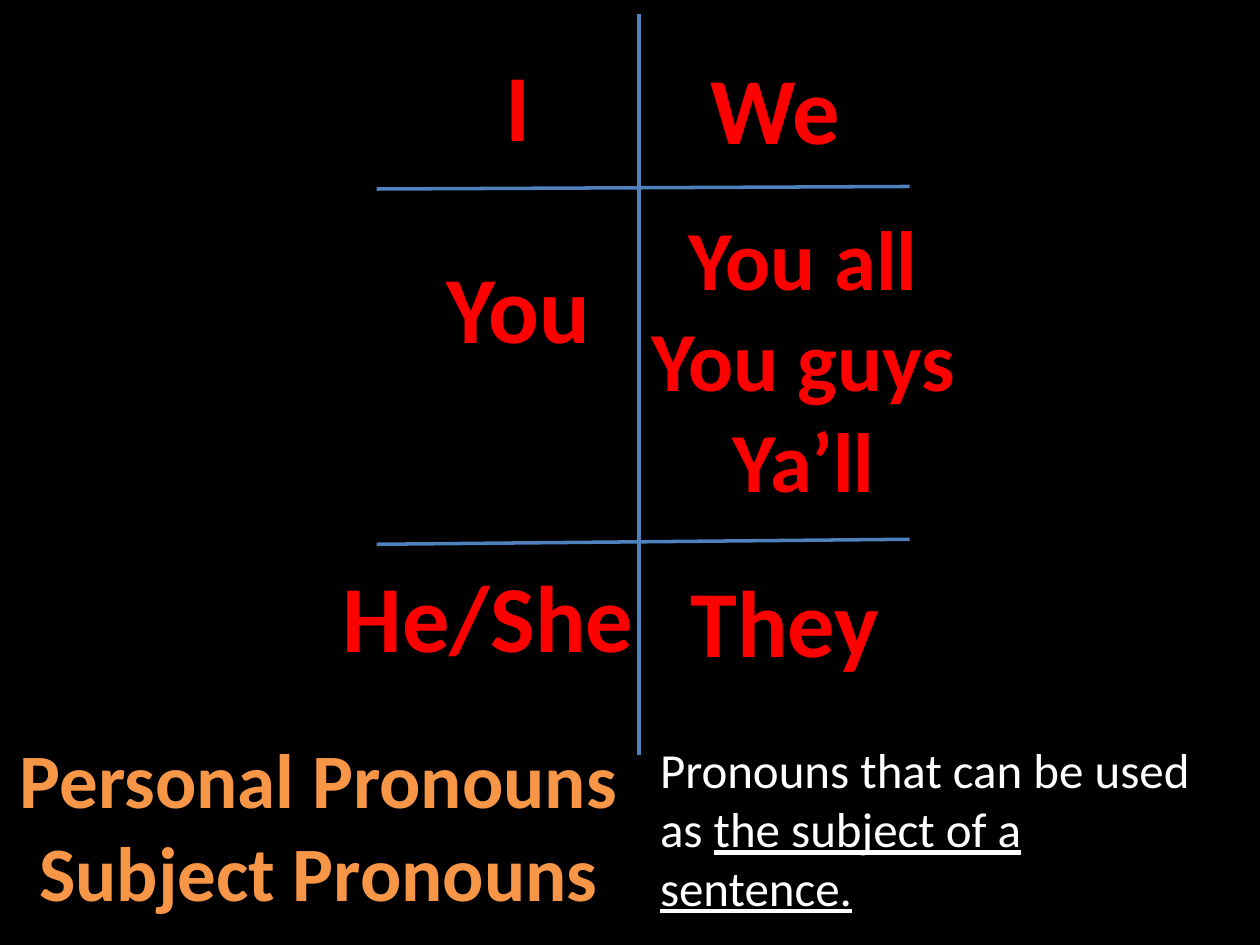
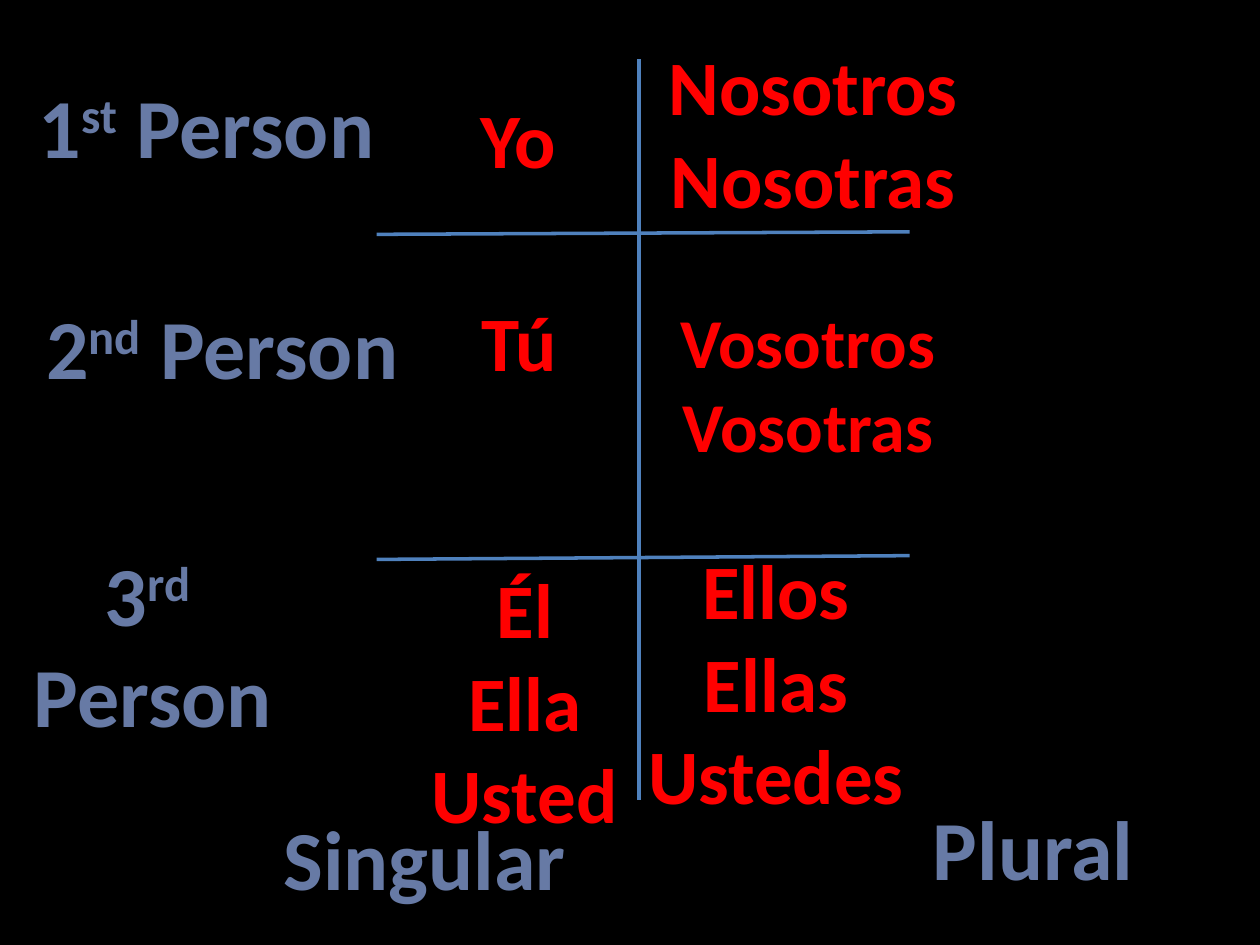
from lxml import etree
from pptx import Presentation
from pptx.dml.color import RGBColor
from pptx.enum.shapes import MSO_CONNECTOR as Connector
from pptx.enum.text import MSO_AUTO_SIZE as AutoSize, PP_ALIGN as Align
from pptx.oxml.ns import qn
from pptx.util import Inches, Pt

BLACK, WHITE, RED = "000000", "FFFFFF", "FF0000"
ORANGE, SLATE, BLUE, CREAM = "F79646", "677AA5", "4F81BD", "F2EEDD"
GRID_LEFT, GRID_MIDDLE, GRID_RIGHT = 2.99, 5.07, 7.22
GRID_HEIGHT = 5.88


def color(hex_code):
    return RGBColor.from_string(hex_code)


class Deck:
    """Holds the shared style and the current slide."""

    def __init__(self):
        self.file = Presentation()
        self.file.slide_width, self.file.slide_height = Inches(10), Inches(7.5)
        self.page = None

    def add_page(self):
        self.page = self.file.slides.add_slide(self.file.slide_layouts[6])
        fill = self.page.background.fill
        fill.solid()
        fill.fore_color.rgb = color(BLACK)

    def line(self, x1, y1, x2, y2):
        line = self.page.shapes.add_connector(
            Connector.STRAIGHT, *(Inches(n) for n in (x1, y1, x2, y2)))
        line.line.color.rgb = color(BLUE)
        line.line.width = Pt(2)
        etree.SubElement(line._element.spPr, qn("a:effectLst"))

    def grid(self, top, rows):
        """One vertical line and a slightly tilted line for each row."""
        self.line(GRID_MIDDLE, top, GRID_MIDDLE, top + GRID_HEIGHT)
        for left_y, right_y in rows:
            self.line(GRID_LEFT, left_y, GRID_RIGHT, right_y)

    def box(self, place, wrap=False):
        frame = self.page.shapes.add_textbox(*(Inches(n) for n in place)).text_frame
        frame.word_wrap = wrap
        frame.auto_size = AutoSize.SHAPE_TO_FIT_TEXT
        return frame

    def span(self, para, text, size, hex_code, raised=False, **extra):
        span = para.add_run()
        span.text = text
        formats = {"name": "Calibri", "size": Pt(size), **extra}
        for name, value in formats.items():
            setattr(span.font, name, value)
        span.font.color.rgb = color(hex_code)
        if raised:
            span.font._element.set("baseline", "30000")
        return span

    def outline(self, span):
        """Give the letters a thin cream edge."""
        edge = etree.Element(qn("a:ln"), w=str(Pt(1)))
        fill = etree.SubElement(edge, qn("a:solidFill"))
        etree.SubElement(fill, qn("a:srgbClr"), val=CREAM)
        span.font._element.insert(0, edge)

    def heading(self, place, lines, size, hex_code):
        """Bold centred lines; a line is a list of parts, odd ones raised."""
        frame = self.box(place)
        for index, parts in enumerate(lines):
            para = frame.add_paragraph() if index else frame.paragraphs[0]
            para.alignment = Align.CENTER
            for number, text in enumerate(parts):
                self.outline(self.span(para, text, size, hex_code,
                                       raised=number % 2 == 1, bold=True))

    def pronouns(self, place, words, size):
        self.heading(place, [[word] for word in words.split("|")], size, RED)


def english_page(deck):
    deck.add_page()
    deck.grid(0.11, [(1.5, 1.48), (4.32, 4.28)])
    deck.heading((0.02, 5.76, 5.02, 1.58),
                 [["Personal Pronouns"], ["Subject Pronouns"]], 44, ORANGE)
    # Pronouns in the grid
    for place, words, size in [
        ((3.91, 0.32, 0.4, 1.01), "I", 54),
        ((3.41, 1.93, 1.41, 1.01), "You", 54),
        ((2.61, 4.38, 2.53, 1.01), "He/She", 54),
        ((5.52, 0.35, 1.27, 1.01), "We", 54),
        ((5.03, 1.59, 2.69, 2.52), "You all|You guys|Ya’ll", 48),
        ((5.37, 4.42, 1.72, 1.01), "They", 54),
    ]:
        deck.pronouns(place, words, size)
    # Definition
    para = deck.box((5.14, 5.82, 4.67, 1.51), wrap=True).paragraphs[0]
    deck.span(para, "Pronouns that can be used as ", 28, WHITE)
    deck.span(para, "the subject of a sentence.", 28, WHITE, underline=True)


def spanish_page(deck):
    deck.add_page()
    deck.grid(0.47, [(1.86, 1.84), (4.44, 4.41)])
    # Pronouns in the grid
    for place, words, size in [
        ((3.69, 0.68, 0.85, 0.84), "Yo", 44),
        ((3.7, 2.29, 0.84, 0.84), "Tú", 44),
        ((3.31, 4.41, 1.71, 2.32), "Él|Ella|Usted", 44),
        ((5.19, 0.26, 2.53, 1.58), "Nosotros|Nosotras", 44),
        ((5.27, 2.32, 2.28, 1.45), "Vosotros|Vosotras", 40),
        ((5.03, 4.26, 2.26, 2.32), "Ellos|Ellas|Ustedes", 44),
    ]:
        deck.pronouns(place, words, size)
    # Row and column names
    for place, lines in [
        ((0.16, 0.54, 2.96, 0.91), [["1", "st", " Person"]]),
        ((0.21, 2.3, 3.11, 0.91), [["2", "nd", " Person"]]),
        ((0.15, 4.26, 2.13, 1.72), [["3", "rd "], ["Person"]]),
        ((2.14, 6.35, 2.46, 0.91), [["Singular"]]),
        ((7.29, 6.27, 1.82, 0.91), [["Plural"]]),
    ]:
        deck.heading(place, lines, 48, SLATE)


def main():
    deck = Deck()
    english_page(deck)
    spanish_page(deck)
    deck.file.save("out.pptx")


if __name__ == "__main__":
    main()
